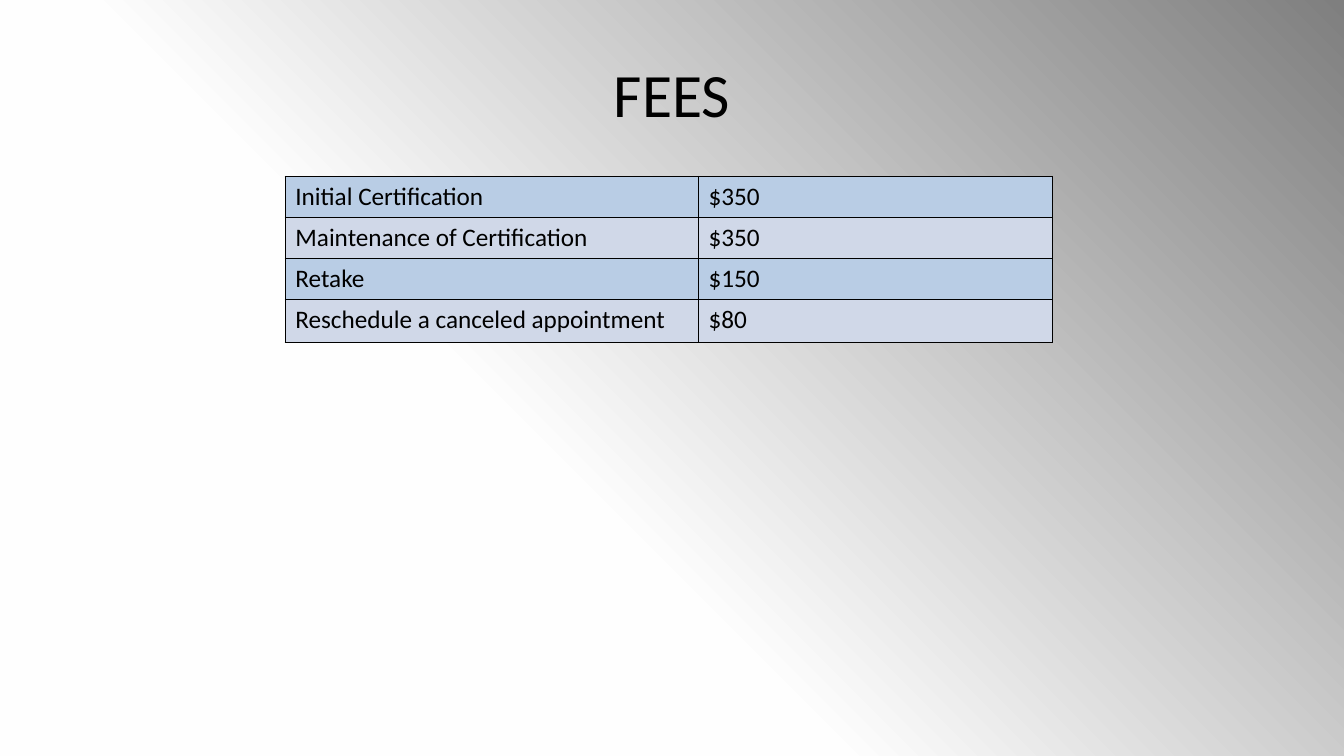
from dataclasses import dataclass

from lxml import etree
from pptx import Presentation
from pptx.dml.color import RGBColor
from pptx.enum.text import MSO_ANCHOR, PP_ALIGN
from pptx.oxml.ns import qn
from pptx.util import Pt

MIDDLE = MSO_ANCHOR.MIDDLE
CENTER = PP_ALIGN.CENTER
BLANK_LAYOUT = 6


@dataclass(frozen=True)
class Theme:
    font: str = "Calibri"
    text: str = "000000"
    border: str = "000000"
    bands: tuple = ("B9CDE5", "D0D8E8")
    backdrop: tuple = ((0, "FFFFFF"), (40, "FEFEFE"), (100, "7F7F7F"))
    title_size: int = 44
    cell_size: int = 18
    border_width: int = 1


THEME = Theme()

FEES = [
    ("Initial Certification", "$350"),
    ("Maintenance of Certification", "$350"),
    ("Retake", "$150"),
    ("Reschedule a canceled appointment", "$80"),
]
COLUMN_WIDTHS = (295.2, 252.7)
ROW_HEIGHTS = (29.4, 29.4, 29.4, 30.6)


def add_color(parent, color):
    etree.SubElement(parent, qn("a:srgbClr"), val=color)


def set_backdrop(page):
    """Radial gradient spreading from the bottom left corner."""
    page.background.fill.gradient()
    gradient = page.element.find(".//" + qn("a:gradFill"))
    for child in list(gradient):
        gradient.remove(child)
    stops = etree.SubElement(gradient, qn("a:gsLst"))
    for percent, color in THEME.backdrop:
        stop = etree.SubElement(stops, qn("a:gs"), pos=str(percent * 1000))
        add_color(stop, color)
    circle = etree.SubElement(gradient, qn("a:path"), path="circle")
    etree.SubElement(circle, qn("a:fillToRect"), t="100000", r="100000")


def write_text(frame, text, size):
    frame.text = text
    font = frame.paragraphs[0].runs[0].font
    font.name = THEME.font
    font.size = Pt(size)
    font.color.rgb = RGBColor.from_string(THEME.text)


def add_title(page, text, left, top, width, height):
    box = page.shapes.add_textbox(Pt(left), Pt(top), Pt(width), Pt(height))
    frame = box.text_frame
    frame.word_wrap = True
    frame.vertical_anchor = MIDDLE
    write_text(frame, text, THEME.title_size)
    frame.paragraphs[0].alignment = CENTER


def add_borders(cell):
    properties = cell._tc.get_or_add_tcPr()
    for side in ("lnL", "lnR", "lnT", "lnB"):
        line = etree.SubElement(properties, qn("a:" + side),
                                w=str(Pt(THEME.border_width)))
        add_color(etree.SubElement(line, qn("a:solidFill")), THEME.border)


def add_fee_table(page, left, top):
    table = page.shapes.add_table(
        len(FEES), len(COLUMN_WIDTHS), Pt(left), Pt(top),
        Pt(sum(COLUMN_WIDTHS)), Pt(sum(ROW_HEIGHTS))).table
    table.first_row = False
    table.horz_banding = False
    for column, width in zip(table.columns, COLUMN_WIDTHS):
        column.width = Pt(width)
    for index, (row, height) in enumerate(zip(table.rows, ROW_HEIGHTS)):
        row.height = Pt(height)
        band = RGBColor.from_string(THEME.bands[index % len(THEME.bands)])
        for cell, text in zip(row.cells, FEES[index]):
            write_text(cell.text_frame, text, THEME.cell_size)
            add_borders(cell)
            cell.fill.solid()
            cell.fill.fore_color.rgb = band


def main():
    deck = Presentation()
    deck.slide_width = Pt(960)
    deck.slide_height = Pt(540)
    page = deck.slides.add_slide(deck.slide_layouts[BLANK_LAYOUT])

    # Background
    set_backdrop(page)

    # Heading
    add_title(page, "FEES", 48, 21.6, 864, 90)

    # Fee list
    add_fee_table(page, 203.8, 126)

    deck.save("out.pptx")


if __name__ == "__main__":
    main()
